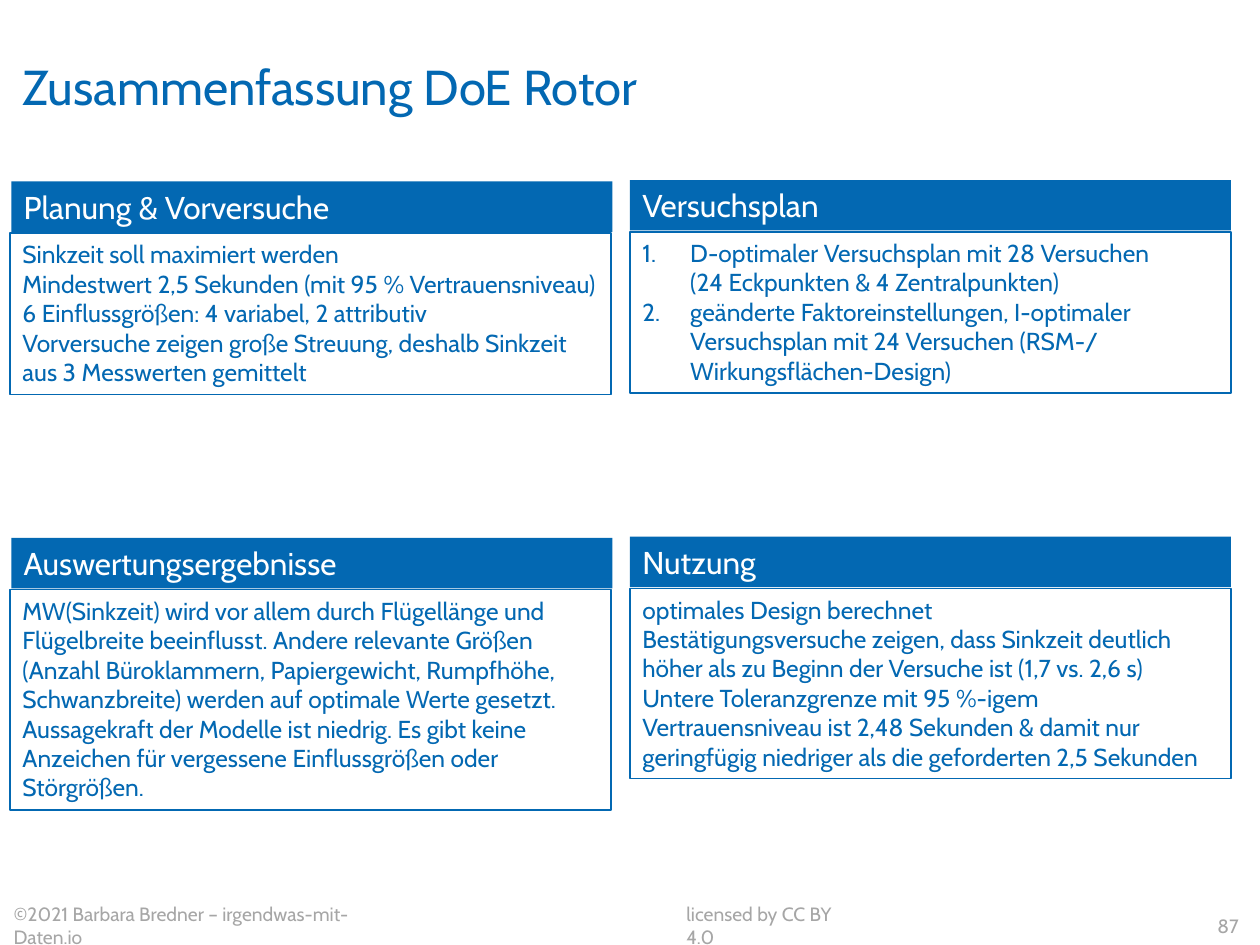
from lxml import etree
from pptx import Presentation
from pptx.dml.color import RGBColor
from pptx.enum import shapes, text
from pptx.oxml import ns
from pptx.util import Inches, Pt

COLORS = {"blue": "0368B2", "white": "FFFFFF", "gray": "A6A6A6"}
FONT = "Cabin"


def write(shape, lines, size, color, align=text.PP_ALIGN.LEFT, numbered=False):
    """Fill a shape with one paragraph per line."""
    frame = shape.text_frame
    for index, line in enumerate(lines):
        paragraph = frame.add_paragraph() if index else frame.paragraphs[0]
        paragraph.text = line
        paragraph.alignment = align
        if numbered:
            properties = paragraph._p.get_or_add_pPr()
            properties.set("marL", str(Inches(0.38)))
            properties.set("indent", str(-Inches(0.38)))
            bullet = etree.SubElement(properties, ns.qn("a:buAutoNum"))
            bullet.set("type", "arabicPeriod")
        paragraph.font.name = FONT
        paragraph.font.size = Pt(size)
        paragraph.font.color.rgb = RGBColor.from_string(COLORS[color])


def add_box(left, top, height):
    """Add a plain rectangle of panel width with text at the top."""
    box = slide.shapes.add_shape(shapes.MSO_SHAPE.RECTANGLE, Inches(left),
                                 Inches(top), Inches(4.77), Inches(height))
    box.shadow.inherit = False
    box.text_frame.word_wrap = True
    box.text_frame.vertical_anchor = text.MSO_ANCHOR.TOP
    box.text_frame.auto_size = text.MSO_AUTO_SIZE.SHAPE_TO_FIT_TEXT
    return box


presentation = Presentation()
presentation.slide_width = Inches(10)
presentation.slide_height = Inches(7.5)
slide = presentation.slides.add_slide(presentation.slide_layouts[5])

# Title
title = slide.shapes.title
title.left, title.top = Inches(0.08), Inches(0.09)
title.width, title.height = Inches(9.84), Inches(1.18)
title.text_frame.vertical_anchor = text.MSO_ANCHOR.MIDDLE
write(title, ["Zusammenfassung DoE Rotor"], 28, "blue")

# Footer
footers = [
    (5.35, 1.56, "licensed by CC BY 4.0", text.PP_ALIGN.LEFT),
    (0.01, 3.2, "©2021 Barbara Bredner – irgendwas-mit-Daten.io", text.PP_ALIGN.LEFT),
    (9.45, 0.48, "87", text.PP_ALIGN.RIGHT),
]
for left, width, label, align in footers:
    footer = slide.shapes.add_textbox(Inches(left), Inches(7.2), Inches(width), Inches(0.29))
    footer.text_frame.word_wrap = False
    footer.text_frame.auto_size = text.MSO_AUTO_SIZE.SHAPE_TO_FIT_TEXT
    footer.text_frame.vertical_anchor = text.MSO_ANCHOR.MIDDLE
    write(footer, [label], 11, "gray", align)

# Panels: header left, body left, top, body height, numbered, heading, lines
panels = [
    (0.09, 0.08, 1.44, 1.28, False, "Planung & Vorversuche", [
        "Sinkzeit soll maximiert werden",
        "Mindestwert 2,5 Sekunden (mit 95 % Vertrauensniveau)",
        "6 Einflussgrößen: 4 variabel, 2 attributiv",
        "Vorversuche zeigen große Streuung, deshalb Sinkzeit aus 3 Messwerten gemittelt",
    ]),
    (5, 5, 1.43, 1.28, True, "Versuchsplan", [
        "D-optimaler Versuchsplan mit 28 Versuchen\n(24 Eckpunkten & 4 Zentralpunkten)",
        "geänderte Faktoreinstellungen, I-optimaler Versuchsplan mit 24 Versuchen "
        "(RSM-/ Wirkungsflächen-Design)",
    ]),
    (0.09, 0.08, 4.27, 1.75, False, "Auswertungsergebnisse", [
        "MW(Sinkzeit) wird vor allem durch Flügellänge und Flügelbreite beeinflusst. "
        "Andere relevante Größen (Anzahl Büroklammern, Papiergewicht, Rumpfhöhe, "
        "Schwanzbreite) werden auf optimale Werte gesetzt.",
        "Aussagekraft der Modelle ist niedrig. Es gibt keine Anzeichen für vergessene "
        "Einflussgrößen oder Störgrößen.",
    ]),
    (5, 5, 4.26, 1.51, False, "Nutzung", [
        "optimales Design berechnet",
        "Bestätigungsversuche zeigen, dass Sinkzeit deutlich höher als zu Beginn der "
        "Versuche ist (1,7 vs. 2,6 s)",
        "Untere Toleranzgrenze mit 95 %-igem Vertrauensniveau ist 2,48 Sekunden & damit "
        "nur geringfügig niedriger als die geforderten 2,5 Sekunden",
    ]),
]
for header_left, body_left, top, body_height, numbered, heading, lines in panels:
    header = add_box(header_left, top, 0.4)
    header.fill.solid()
    header.fill.fore_color.rgb = RGBColor.from_string(COLORS["blue"])
    header.line.fill.background()
    write(header, [heading], 18, "white")

    body = add_box(body_left, top + 0.41, body_height)
    body.fill.background()
    body.line.color.rgb = RGBColor.from_string(COLORS["blue"])
    body.line.width = Pt(0.75)
    write(body, lines, 14, "blue", numbered=numbered)

presentation.save("out.pptx")
